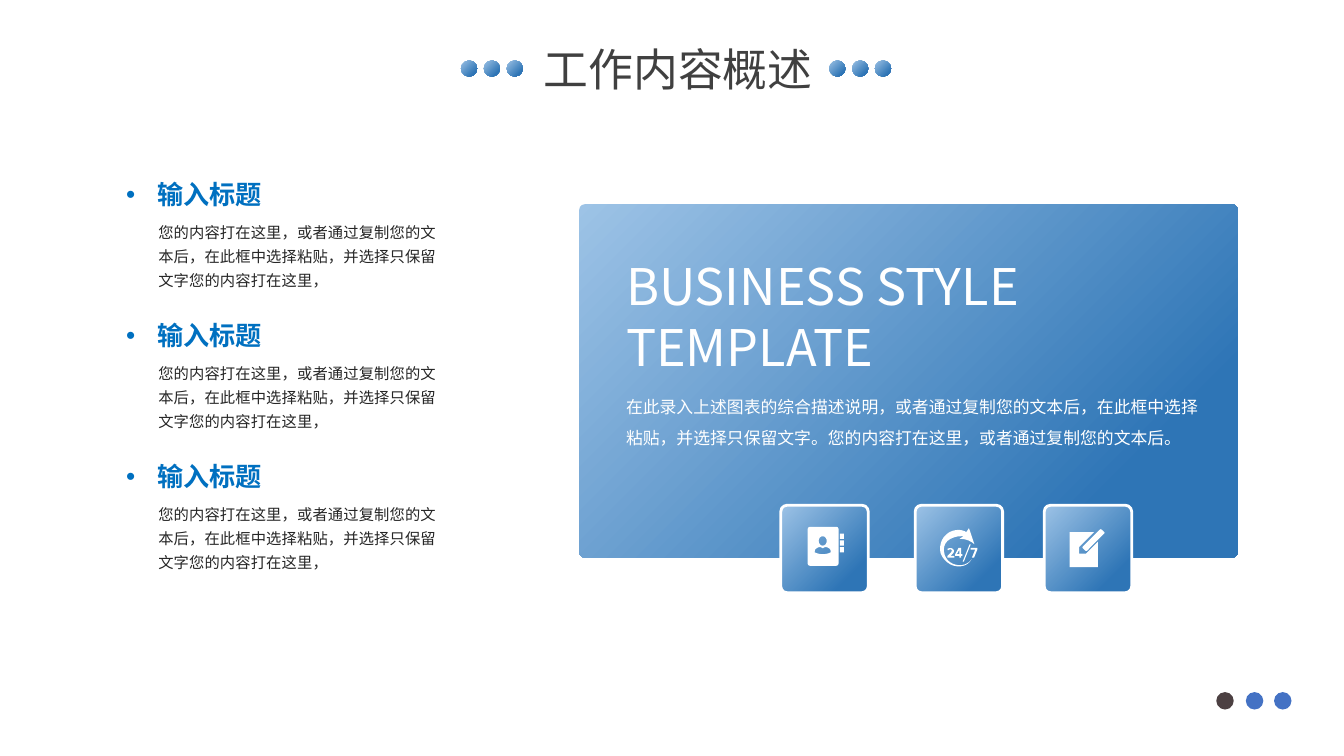
from dataclasses import dataclass

from lxml import etree
from pptx import Presentation
from pptx.dml.color import RGBColor
from pptx.enum.shapes import MSO_SHAPE
from pptx.enum.text import MSO_ANCHOR, MSO_AUTO_SIZE, PP_ALIGN
from pptx.oxml.ns import qn
from pptx.util import Inches, Pt

ROUNDED, OVAL = MSO_SHAPE.ROUNDED_RECTANGLE, MSO_SHAPE.OVAL
LEFT, CENTER = PP_ALIGN.LEFT, PP_ALIGN.CENTER
TOP, NO_FIT = MSO_ANCHOR.TOP, MSO_AUTO_SIZE.NONE
MIL = Inches(1) / 1000

HEADING = "输入标题"
BODY = "您的内容打在这里，或者通过复制您的文本后，在此框中选择粘贴，并选择只保留文字您的内容打在这里，"
SUMMARY = (
    "在此录入上述图表的综合描述说明，或者通过复制您的文本后，在此框中选择粘贴，"
    "并选择只保留文字。您的内容打在这里，或者通过复制您的文本后。"
)


@dataclass(frozen=True)
class Theme:
    font: str = "Noto Sans CJK SC"
    light: str = "9DC3E6"
    deep: str = "2E75B6"
    white: str = "FFFFFF"
    title: str = "404040"
    heading: str = "0070C0"
    body: str = "262626"
    marker_dark: str = "4C4042"
    marker: str = "4472C4"
    title_size: float = 24
    headline_size: float = 27
    heading_size: float = 14
    summary_size: float = 9
    body_size: float = 8.25


def box(left, top, right, bottom):
    return [(left, top), (right, top), (right, bottom), (left, bottom)]


CONTACT_ICON = [
    [(220, 160), (410, 160), (430, 160, 430, 180, 430, 180), (430, 430),
     (430, 450, 410, 450, 410, 450), (220, 450), (200, 450, 200, 430, 200, 430),
     (200, 180), (200, 160, 220, 160, 220, 160)],
    [(312, 230), (352, 230, 352, 300, 312, 300), (272, 300, 272, 230, 312, 230)],
    [(290, 310), (300, 310, 305, 318, 312, 318), (320, 318, 325, 310, 335, 310),
     (360, 316, 372, 325, 372, 350), (330, 368, 295, 368, 252, 350),
     (252, 325, 265, 316, 290, 310)],
    *[box(440, top, 470, top + 40) for top in (210, 260, 310)],
]
SERVICE_ICON = [
    [(280, 190), (310, 180, 350, 180, 380, 200), (400, 170), (440, 290),
     (420, 270, 380, 250, 330, 250), (360, 230), (350, 230),
     (260, 230, 190, 280, 220, 370), (240, 430, 310, 460, 370, 440),
     (390, 430, 410, 420, 420, 400), (410, 420, 390, 440, 360, 450),
     (290, 470, 220, 430, 190, 360), (170, 290, 210, 210, 280, 190)],
    [(240, 390), (240, 378), (265, 352), (285, 330, 262, 320, 244, 336),
     (240, 324), (270, 308, 305, 330, 280, 360), (262, 377), (292, 377), (292, 390)],
    [(322, 318), (342, 318), (342, 364), (352, 364), (352, 376), (342, 376),
     (342, 390), (328, 390), (328, 376), (298, 376), (298, 364)],
    [(328, 332), (310, 364), (328, 364)],
    [(404, 292), (413, 292), (362, 420), (353, 420)],
    [(412, 318), (462, 318), (462, 330), (438, 390), (422, 390), (446, 331), (412, 331)],
]
EDIT_ICON = [
    [(370, 200), (270, 300), (260, 310), (260, 360), (310, 360), (320, 350),
     (400, 270), (400, 460), (190, 460), (190, 200)],
    [(412, 183), (418, 177, 424, 177, 430, 183), (446, 199),
     (452, 205, 452, 205, 446, 211), (321, 336), (315, 342, 311, 342, 305, 336),
     (288, 319), (282, 313, 282, 313, 288, 307)],
]


def flatten(contour, steps=8):
    """Turn line points and cubic curve segments into plain points."""
    points = [contour[0]]
    for segment in contour[1:]:
        if len(segment) == 2:
            points.append(segment)
            continue
        x0, y0 = points[-1]
        x1, y1, x2, y2, x3, y3 = segment
        for i in range(1, steps + 1):
            t = i / steps
            a, b, c, d = (1 - t) ** 3, 3 * t * (1 - t) ** 2, 3 * t * t * (1 - t), t ** 3
            points.append((a * x0 + b * x1 + c * x2 + d * x3,
                           a * y0 + b * y1 + c * y2 + d * y3))
    return points


def write(tf, text, *, font, size, color, bold=False, align=LEFT, spacing=1.0, bullet=None):
    """Fill a text frame, one paragraph per line of text."""
    tf.word_wrap = True
    tf.auto_size = NO_FIT
    tf.vertical_anchor = TOP
    for i, line in enumerate(text.split("\n")):
        p = tf.add_paragraph() if i else tf.paragraphs[0]
        p.alignment = align
        p.line_spacing = spacing
        r = p.add_run()
        r.text = line
        r.font.name, r.font.size, r.font.bold = font, Pt(size), bold
        r.font.color.rgb = RGBColor.from_string(color)
        etree.SubElement(r._r.get_or_add_rPr(), qn("a:ea"), typeface=font)
        if bullet:
            pPr = p._p.get_or_add_pPr()
            pPr.set("marL", str(Inches(0.23)))
            pPr.set("indent", str(-Inches(0.23)))
            etree.SubElement(pPr, qn("a:buFont"), typeface="Arial")
            etree.SubElement(pPr, qn("a:buChar"), char=bullet)


class Builder:
    """Holds the theme and the current slide."""

    def __init__(self, prs, theme):
        self.theme = theme
        self.s = prs.slides.add_slide(prs.slide_layouts[5])

    def title(self, text, x, y, w, h, **style):
        sp = self.s.shapes.title
        sp.left, sp.top, sp.width, sp.height = map(Inches, (x, y, w, h))
        write(sp.text_frame, text, font=self.theme.font, **style)

    def text(self, text, x, y, w, h, **style):
        sp = self.s.shapes.add_textbox(*map(Inches, (x, y, w, h)))
        write(sp.text_frame, text, font=self.theme.font, **style)

    def shape(self, kind, x, y, w, h, *, fill=None, radius=None, outline=None):
        sp = self.s.shapes.add_shape(kind, *map(Inches, (x, y, w, h)))
        sp.shadow.inherit = False
        if radius is not None:
            sp.adjustments[0] = radius
        if fill:
            sp.fill.solid()
            sp.fill.fore_color.rgb = RGBColor.from_string(fill)
        else:
            sp.fill.gradient()
            sp.fill.gradient_angle = 315
            stops = ((0, self.theme.light), (0.81, self.theme.deep))
            for stop, (position, color) in zip(sp.fill.gradient_stops, stops):
                stop.position = position
                stop.color.rgb = RGBColor.from_string(color)
        if outline:
            sp.line.color.rgb = RGBColor.from_string(outline)
            sp.line.width = Pt(1.5)
        else:
            sp.line.fill.background()

    def icon(self, contours, x, y):
        first, *rest = map(flatten, contours)
        outline = self.s.shapes.build_freeform(*first[0], scale=MIL)
        outline.add_line_segments(first[1:])
        for points in rest:
            outline.move_to(*points[0])
            outline.add_line_segments(points[1:])
        sp = outline.convert_to_shape(Inches(x), Inches(y))
        sp.shadow.inherit = False
        sp.fill.solid()
        sp.fill.fore_color.rgb = RGBColor.from_string(self.theme.white)
        sp.line.fill.background()


def main():
    prs = Presentation()
    prs.slide_width = Inches(10)
    prs.slide_height = prs.slide_width * 9 // 16
    th = Theme()
    b = Builder(prs, th)

    b.title("工作内容概述", 2, 0.26, 6.09, 0.5, size=th.title_size, color=th.title, align=CENTER)
    for start in (3.43, 6.17):
        for i in range(3):
            b.shape(OVAL, start + i * 0.17, 0.45, 0.12, 0.12)

    b.shape(ROUNDED, 4.31, 1.52, 4.9, 2.63, radius=0.016)
    b.text("BUSINESS STYLE\nTEMPLATE", 4.56, 1.85, 3.36, 1.01,
           size=th.headline_size, color=th.white)
    b.text(SUMMARY, 4.56, 2.83, 4.48, 0.56, size=th.summary_size, color=th.white, spacing=1.5)
    for x, contours in ((5.81, CONTACT_ICON), (6.81, SERVICE_ICON), (7.77, EDIT_ICON)):
        b.shape(ROUNDED, x, 3.76, 0.65, 0.65, radius=0.07, outline=th.white)
        b.icon(contours, x, 3.76)

    for i in range(3):
        y = 1.28 + i * 1.05
        b.text(HEADING, 0.84, y, 1.55, 0.34, size=th.heading_size, color=th.heading,
               bold=True, bullet="•")
        b.text(BODY, 1.08, y + 0.29, 2.36, 0.64, size=th.body_size, color=th.body, spacing=1.3)

    for x, color in ((9.05, th.marker_dark), (9.27, th.marker), (9.48, th.marker)):
        b.shape(OVAL, x, 5.15, 0.13, 0.13, fill=color)

    prs.save("out.pptx")


if __name__ == "__main__":
    main()
